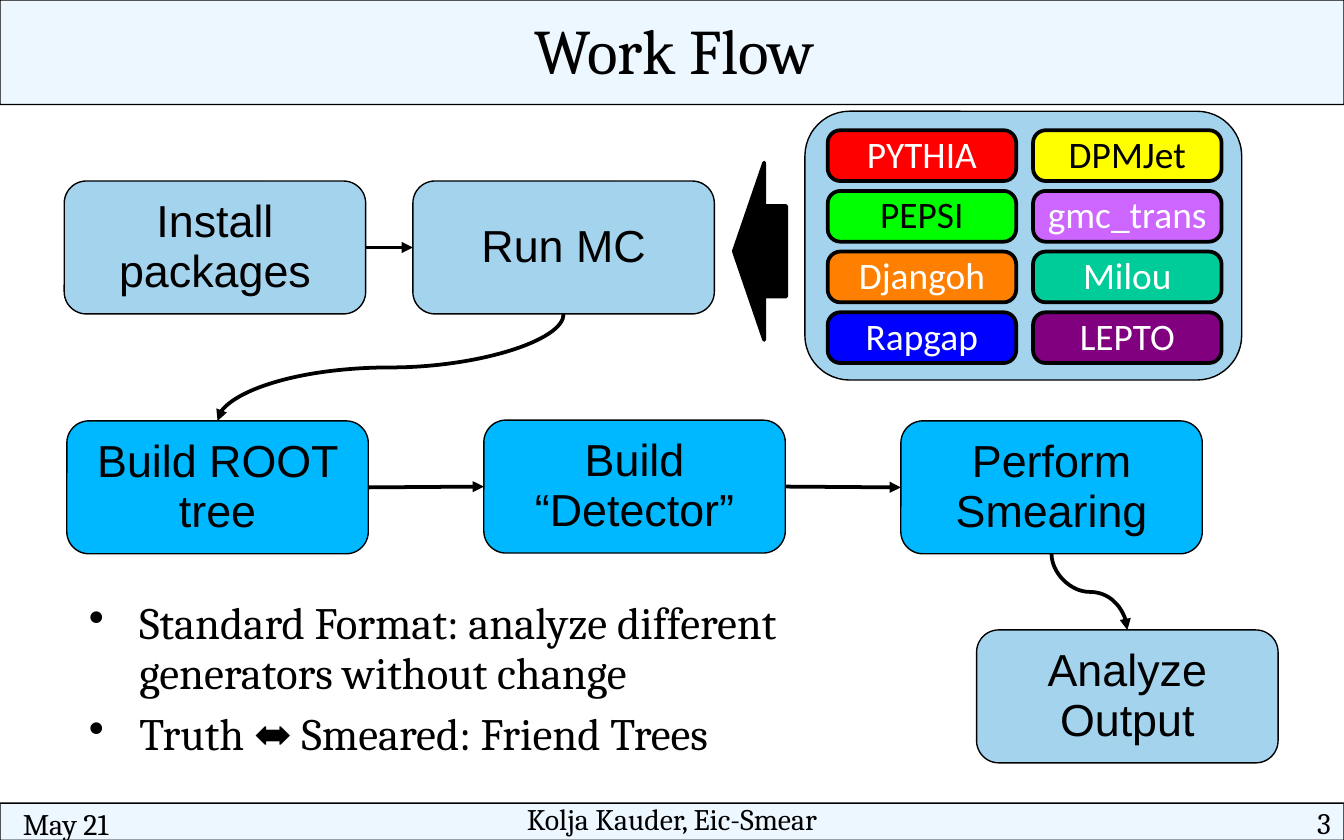
from dataclasses import dataclass

from lxml import etree
from pptx import Presentation
from pptx import util as u
from pptx.dml.color import RGBColor
from pptx.enum import shapes, text
from pptx.oxml import ns

BLACK, WHITE = "000000", "FFFFFF"
BAR, PALE, BRIGHT = "EDF7FF", "A4D3EE", "00B8FF"
SHAPE = shapes.MSO_SHAPE
LINK = shapes.MSO_CONNECTOR
ALIGN = text.PP_ALIGN
ANCHOR = text.MSO_ANCHOR
TOP, LEFT, BOTTOM, RIGHT = range(4)


@dataclass
class Step:
    label: str
    left: float
    top: float
    fill: str


@dataclass
class Generator:
    name: str
    fill: str
    color: str = WHITE


@dataclass
class Link:
    start: str
    end: str
    curved: bool = False


STEPS = [
    Step("Install packages", 34.4, 97, PALE),
    Step("Run MC", 221.2, 97, PALE),
    Step("Build ROOT tree", 35.8, 225.5, BRIGHT),
    Step("Build “Detector”", 259.2, 225.1, BRIGHT),
    Step("Perform Smearing", 482.6, 225.5, BRIGHT),
    Step("Analyze Output", 523.2, 337.5, PALE),
]
LINKS = [
    Link("Install packages", "Run MC"),
    Link("Build ROOT tree", "Build “Detector”"),
    Link("Build “Detector”", "Perform Smearing"),
    Link("Run MC", "Build ROOT tree", curved=True),
    Link("Perform Smearing", "Analyze Output", curved=True),
]
GENERATORS = [
    Generator("PYTHIA", "FF0000"), Generator("DPMJet", "FFFF00", BLACK),
    Generator("PEPSI", "00FF00", BLACK), Generator("gmc_trans", "CC66FF"),
    Generator("Djangoh", "FF8000"), Generator("Milou", "00CC99"),
    Generator("Rapgap", "0000FF"), Generator("LEPTO", "800080"),
]


def rgb(value: str) -> RGBColor:
    return RGBColor.from_string(value)


def write(sp, content: str, *, size: float, font: str = "Cambria", color: str = BLACK,
          align=ALIGN.LEFT, anchor=ANCHOR.TOP, spacing: float = 0.93,
          insets=(0, 0, 0, 0), bullet: str = "", after: float = 0) -> None:
    tf = sp.text_frame
    tf.word_wrap = True
    tf.vertical_anchor = anchor
    tf.margin_left, tf.margin_top, tf.margin_right, tf.margin_bottom = map(u.Pt, insets)
    for i, line in enumerate(content.split("\n")):
        p = tf.add_paragraph() if i else tf.paragraphs[0]
        p.alignment, p.line_spacing, p.space_after = align, spacing, u.Pt(after)
        if bullet:
            ppr = p._p.get_or_add_pPr()
            ppr.set("marL", str(u.Pt(27)))
            ppr.set("indent", str(u.Pt(-27)))
            etree.SubElement(ppr, ns.qn("a:buChar")).set("char", bullet)
        r = p.add_run()
        r.text = line
        r.font.size, r.font.name = u.Pt(size), font
        r.font.color.rgb = rgb(color)


def add_text(s, box, content: str, **fmt) -> None:
    write(s.shapes.add_textbox(*map(u.Pt, box)), content, **fmt)


def add_box(parent, box, fill: str, *, kind=SHAPE.ROUNDED_RECTANGLE, width: float = 0.75,
            adjust=()):
    sp = parent.add_shape(kind, *map(u.Pt, box))
    sp.shadow.inherit = False
    sp.fill.solid()
    sp.fill.fore_color.rgb = rgb(fill)
    sp.line.color.rgb = rgb(BLACK)
    sp.line.width = u.Pt(width)
    for i, value in enumerate(adjust):
        sp.adjustments[i] = value
    return sp


def add_step(s, step: Step):
    sp = add_box(s.shapes, (step.left, step.top, 161.5, 71.2), step.fill)
    write(sp, step.label, size=24, font="Arial", align=ALIGN.CENTER,
          anchor=ANCHOR.MIDDLE, insets=(7.2, 3.6, 7.2, 3.6))
    return sp


def add_link(s, start, end, curved: bool) -> None:
    cn = s.shapes.add_connector(LINK.CURVE if curved else LINK.STRAIGHT, 0, 0, 0, 0)
    cn.begin_connect(start, BOTTOM if curved else RIGHT)
    cn.end_connect(end, TOP if curved else LEFT)
    cn.line.color.rgb = rgb(BLACK)
    cn.line.width = u.Pt(2)
    sppr = cn._element.spPr
    tail = etree.SubElement(cn.line._get_or_add_ln(), ns.qn("a:tailEnd"))
    tail.set("type", "triangle")
    etree.SubElement(sppr, ns.qn("a:effectLst"))
    if curved:
        turn_down(cn)


def turn_down(cn) -> None:
    dx, dy = cn.end_x - cn.begin_x, cn.end_y - cn.begin_y
    mid_x, mid_y = (cn.begin_x + cn.end_x) // 2, (cn.begin_y + cn.end_y) // 2
    xfrm = cn._element.spPr.find(ns.qn("a:xfrm"))
    for name in ("flipH", "flipV"):
        xfrm.attrib.pop(name, None)
    cn.width, cn.height = abs(dy), abs(dx)
    cn.left, cn.top = mid_x - abs(dy) // 2, mid_y - abs(dx) // 2
    xfrm.set("rot", str((270 if dx > 0 else 90) * 60000))
    if dx > 0:
        xfrm.set("flipH", "1")


def add_generators(s) -> None:
    group = s.shapes.add_group_shape().shapes
    add_box(group, (431.2, 59.6, 234, 144), PALE)
    for i, gen in enumerate(GENERATORS):
        row, col = divmod(i, 2)
        box = (443.4 + 110 * col, 69.8 + 32.5 * row, 101, 27.2)
        sp = add_box(group, box, gen.fill, width=2, adjust=[0.25])
        write(sp, gen.name, size=20, font="Calibri", color=gen.color,
              align=ALIGN.CENTER, anchor=ANCHOR.MIDDLE)


def main() -> None:
    prs = Presentation()
    prs.slide_width, prs.slide_height = u.Pt(720), u.Pt(450)
    s = prs.slides.add_slide(prs.slide_layouts[6])

    add_box(s.shapes, (0, 430.3, 720, 19.9), BAR, adjust=[0.005])
    add_box(s.shapes, (0, 0, 720, 56), BAR, adjust=[0.002])
    add_text(s, (12.2, 429.1, 168, 31), "May 21", size=16, spacing=1.12)
    add_text(s, (150.5, 430.6, 419, 31), "Kolja Kauder, Eic-Smear", size=16,
             align=ALIGN.CENTER, spacing=0.92)
    add_text(s, (545, 432.7, 168, 31), "3", size=16, align=ALIGN.RIGHT, spacing=0.92)
    add_text(s, (12.2, 4.3, 698.4, 41.8), "Work Flow", size=34, align=ALIGN.CENTER,
             spacing=0.92, insets=(5.8, 5.8, 5.8, 2.9))
    add_text(s, (41.8, 318.2, 455.8, 93.6),
             "Standard Format: analyze different generators without change\n"
             "Truth ⬌ Smeared: Friend Trees",
             size=24, bullet="•", after=6, insets=(5.8, 2.9, 5.8, 2.9))

    boxes = {step.label: add_step(s, step) for step in STEPS}
    add_generators(s)
    for link in LINKS:
        add_link(s, boxes[link.start], boxes[link.end], link.curved)
    add_box(s.shapes, (393.1, 87.1, 28.1, 95), BLACK, kind=SHAPE.LEFT_ARROW, width=2,
            adjust=[0.51, 0.58])
    prs.save("out.pptx")


if __name__ == "__main__":
    main()
